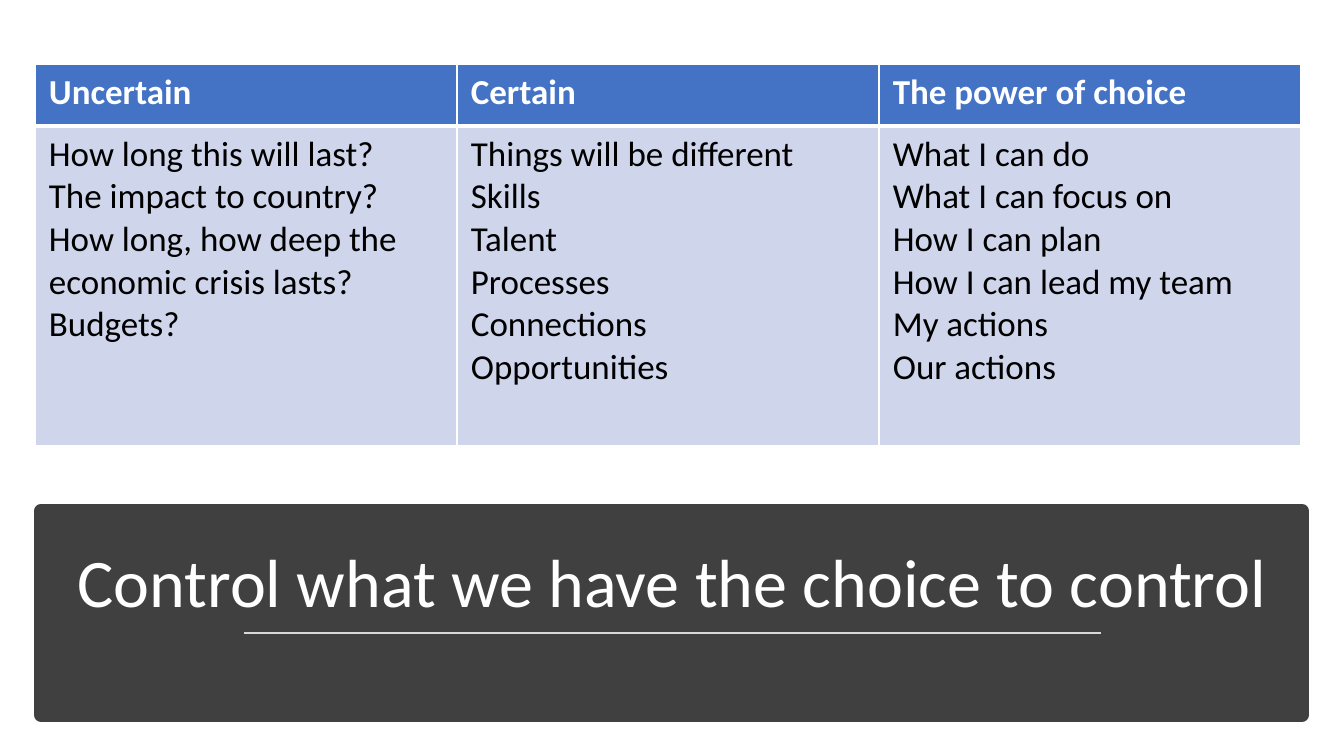
import pptx
import pptx.util
import pptx.dml.color
import pptx.enum.shapes
import pptx.enum.text
import pptx.oxml.ns
import lxml.etree

theme = {
    "font": "Calibri",
    "white": "FFFFFF",
    "black": "000000",
    "panel": "404040",
    "rule": "D9D9D9",
    "head": "4472C4",
    "body": "CFD5EA",
    "title": 48.6,
    "cell": 25,
}
topics = {
    "Uncertain": [
        "How long this will last?",
        "The impact to country?",
        "How long, how deep the economic crisis lasts?",
        "Budgets?",
    ],
    "Certain": [
        "Things will be different",
        "Skills",
        "Talent",
        "Processes",
        "Connections",
        "Opportunities",
    ],
    "The power of choice": [
        "What I can do",
        "What I can focus on",
        "How I can plan",
        "How I can lead my team",
        "My actions",
        "Our actions",
    ],
}
scale = 914400 / 100.8
qn = pptx.oxml.ns.qn


def px(*nums):
    return [pptx.util.Emu(round(num * scale)) for num in nums]


def write(para, text, size, color, bold=False):
    run = para.add_run()
    run.text = text
    run.font.name = theme["font"]
    run.font.size = pptx.util.Pt(size)
    run.font.bold = bold
    run.font.color.rgb = pptx.dml.color.RGBColor.from_string(theme[color])


deck = pptx.Presentation()
deck.slide_width, deck.slide_height = px(1344, 756)
slide = deck.slides.add_slide(deck.slide_layouts[6])

panel = slide.shapes.add_shape(
    pptx.enum.shapes.MSO_SHAPE.RECTANGLE, *px(41, 511, 1261, 204)
)
panel.shadow.inherit = False
gray = pptx.dml.color.RGBColor.from_string(theme["panel"])
panel.fill.solid()
panel.fill.fore_color.rgb = gray
panel.line.color.rgb = gray
panel.line.width = pptx.util.Pt(10)

title = slide.shapes.add_textbox(*px(58, 524, 1228, 103)).text_frame
title.word_wrap = True
title.vertical_anchor = pptx.enum.text.MSO_ANCHOR.BOTTOM
para = title.paragraphs[0]
para.alignment = pptx.enum.text.PP_ALIGN.CENTER
para.line_spacing = 0.9
write(para, "Control what we have the choice to control", theme["title"], "white")

rule = slide.shapes.add_connector(
    pptx.enum.shapes.MSO_CONNECTOR.STRAIGHT, *px(244, 633, 1101, 633)
)
rule.line.color.rgb = pptx.dml.color.RGBColor.from_string(theme["rule"])
rule.line.width = pptx.util.Pt(1.75)
lxml.etree.SubElement(rule.element.spPr, qn("a:effectLst"))

table = slide.shapes.add_table(2, 3, *px(35, 64, 1266, 382)).table
table.rows[0].height, table.rows[1].height = px(62, 320)

for col, (head, items) in enumerate(topics.items()):
    table.columns[col].width = px(422)[0]
    for row, lines in enumerate([[head], items]):
        cell = table.cell(row, col)
        cell.margin_left, cell.margin_top = px(14, 7)
        cell.margin_right, cell.margin_bottom = px(14, 7)
        props = cell._tc.get_or_add_tcPr()
        thick = "lnT" if row else "lnB"
        for side in ("lnL", "lnR", "lnT", "lnB"):
            width = pptx.util.Pt(3 if side == thick else 1)
            edge = lxml.etree.SubElement(props, qn("a:" + side), w=str(width))
            fill = lxml.etree.SubElement(edge, qn("a:solidFill"))
            lxml.etree.SubElement(fill, qn("a:srgbClr"), val=theme["white"])
        cell.fill.solid()
        cell.fill.fore_color.rgb = pptx.dml.color.RGBColor.from_string(
            theme["body" if row else "head"]
        )
        frame = cell.text_frame
        for place, text in enumerate(lines):
            para = frame.add_paragraph() if place else frame.paragraphs[0]
            write(para, text, theme["cell"], "black" if row else "white", row == 0)

deck.save("out.pptx")
